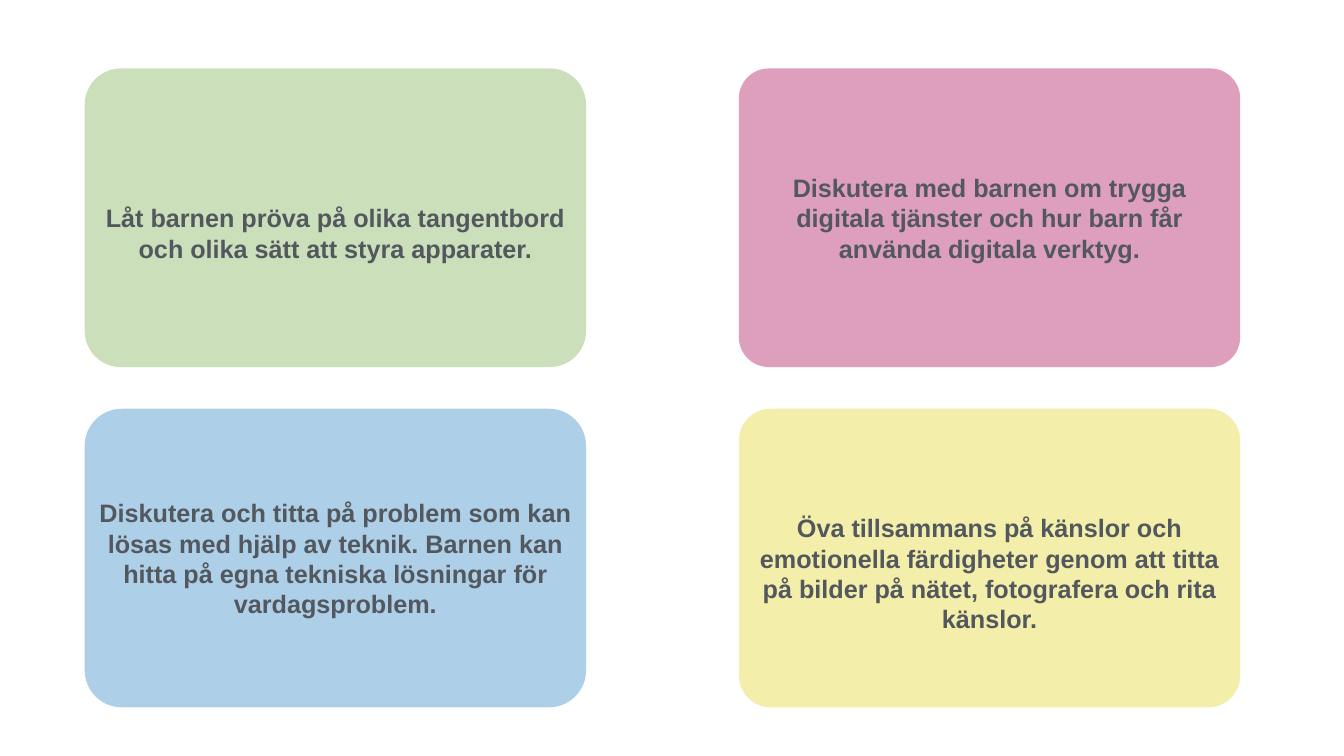
from pptx import Presentation
from pptx.dml.color import RGBColor
from pptx.enum.shapes import MSO_SHAPE
from pptx.enum.text import MSO_ANCHOR, PP_ALIGN
from pptx.util import Cm, Pt

GREEN = RGBColor(0xCB, 0xDF, 0xBA)
PINK = RGBColor(0xDE, 0x9F, 0xBC)
BLUE = RGBColor(0xAD, 0xCF, 0xE8)
YELLOW = RGBColor(0xF3, 0xEE, 0xA9)
GREY = RGBColor(0x53, 0x58, 0x5F)

LEFT, TOP = 4.27, 3.45
CARD_W, CARD_H = 25.27, 15.05
STEP_X, STEP_Y = 32.97, 17.15
INSET = 0.15
LINE_H = 1.53

CARDS = [
    ("Låt barnen pröva på olika tangentbord och olika sätt att styra apparater.",
     GREEN, 0.121, LINE_H),
    ("Diskutera med barnen om trygga digitala tjänster och hur barn får "
     "använda digitala verktyg.", PINK, 0.1, 0),
    ("Diskutera och titta på problem som kan lösas med hjälp av teknik. "
     "Barnen kan hitta på egna tekniska lösningar för vardagsproblem.",
     BLUE, 0.124, 0),
    ("Öva tillsammans på känslor och emotionella färdigheter genom att titta "
     "på bilder på nätet, fotografera och rita känslor.",
     YELLOW, 0.107, LINE_H),
]


def write_text(tf, text, size=36, color=GREY, bold=True, top_space=0):
    tf.word_wrap = True
    tf.vertical_anchor = MSO_ANCHOR.MIDDLE
    tf.margin_left = tf.margin_right = tf.margin_bottom = Cm(INSET)
    tf.margin_top = Cm(INSET + top_space)
    p = tf.paragraphs[0]
    p.alignment = PP_ALIGN.CENTER
    r = p.add_run()
    r.text = text
    r.font.name = "Arial"
    r.font.size = Pt(size)
    r.font.bold = bold
    r.font.color.rgb = color


def add_card(s, x, y, w, h, text, fill, radius, top_space):
    sp = s.shapes.add_shape(MSO_SHAPE.ROUNDED_RECTANGLE, Cm(x), Cm(y), Cm(w), Cm(h))
    sp.adjustments[0] = radius
    sp.shadow.inherit = False
    sp.fill.solid()
    sp.fill.fore_color.rgb = fill
    sp.line.fill.background()
    write_text(sp.text_frame, text, top_space=top_space)


def main():
    prs = Presentation()
    prs.slide_width, prs.slide_height = Cm(67.74), Cm(38.1)
    s = prs.slides.add_slide(prs.slide_layouts[6])
    for i, card in enumerate(CARDS):
        row, col = divmod(i, 2)
        add_card(s, LEFT + col * STEP_X, TOP + row * STEP_Y, CARD_W, CARD_H, *card)
    prs.save("out.pptx")


if __name__ == "__main__":
    main()
